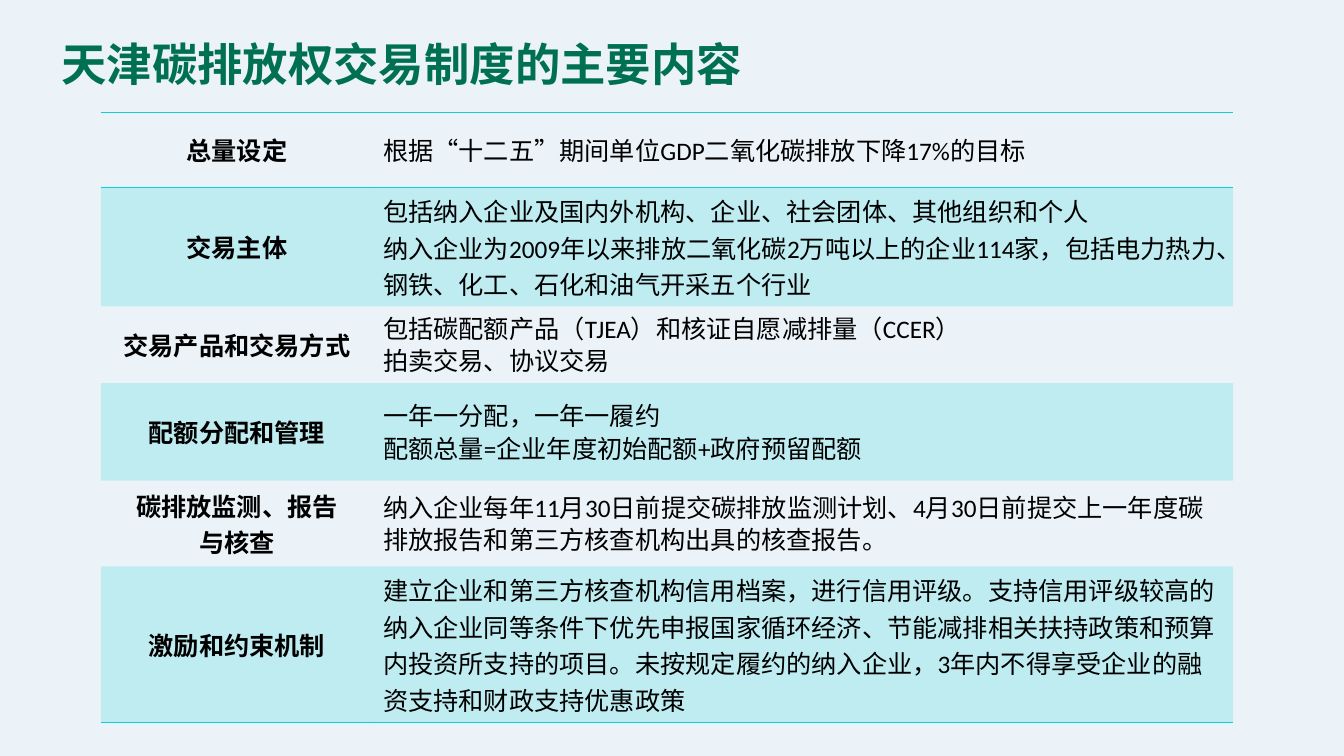
from lxml import etree
from pptx import Presentation
from pptx.dml.color import RGBColor
from pptx.enum.text import MSO_ANCHOR, PP_ALIGN
from pptx.oxml.ns import qn
from pptx.util import Inches, Pt

BACKGROUND = RGBColor(0xEC, 0xF3, 0xF8)
GREEN = RGBColor(0x00, 0x71, 0x50)
TURQUOISE = RGBColor(0x0B, 0xD0, 0xD9)
BLACK = RGBColor(0x00, 0x00, 0x00)
MIDDLE = MSO_ANCHOR.MIDDLE
CENTER = PP_ALIGN.CENTER
LEFT = PP_ALIGN.LEFT
NO_GRID_STYLE = "{2D5ABB26-0587-4C30-8999-92F81FD0307C}"


def add_rule(cell, side):
    line = etree.SubElement(cell._tc.get_or_add_tcPr(), qn(f"a:{side}"), w=str(Pt(1)))
    fill = etree.SubElement(line, qn("a:solidFill"))
    etree.SubElement(fill, qn("a:srgbClr"), val=str(TURQUOISE))


def write_paragraphs(frame, lines, font_name, size, color, bold, spacing, align):
    for index, line in enumerate(lines):
        paragraph = frame.paragraphs[0] if index == 0 else frame.add_paragraph()
        paragraph.alignment = align
        paragraph.line_spacing = spacing
        run = paragraph.add_run()
        run.text = line
        run.font.name = font_name
        run.font.size = Pt(size)
        run.font.bold = bold
        run.font.color.rgb = color


presentation = Presentation()
presentation.slide_width = Inches(13.33)
presentation.slide_height = Inches(7.5)
slide = presentation.slides.add_slide(presentation.slide_layouts[6])
slide.background.fill.solid()
slide.background.fill.fore_color.rgb = BACKGROUND

title = slide.shapes.add_textbox(Inches(0.51), Inches(0.2), Inches(7.13), Inches(0.92)).text_frame
title.word_wrap = True
title.vertical_anchor = MIDDLE
write_paragraphs(title, ["天津碳排放权交易制度的主要内容"], "Montserrat", 32.4, GREEN, True, 0.9, LEFT)

policies = [
    (0.74, 0.9, 0.9, ["总量设定"],
     ["根据“十二五”期间单位GDP二氧化碳排放下降17%的目标"]),
    (1.18, 1.0, 1.0, ["交易主体"],
     ["包括纳入企业及国内外机构、企业、社会团体、其他组织和个人",
      "纳入企业为2009年以来排放二氧化碳2万吨以上的企业114家，包括电力热力、钢铁、化工、石化和油气开采五个行业"]),
    (0.76, 1.0, 0.9, ["交易产品和交易方式"],
     ["包括碳配额产品（TJEA）和核证自愿减排量（CCER）",
      "拍卖交易、协议交易"]),
    (0.97, 1.0, 0.9, ["配额分配和管理"],
     ["一年一分配，一年一履约",
      "配额总量=企业年度初始配额+政府预留配额"]),
    (0.85, 1.0, 0.9, ["碳排放监测、报告", "与核查"],
     ["纳入企业每年11月30日前提交碳排放监测计划、4月30日前提交上一年度碳排放报告和第三方核查机构出具的核查报告。"]),
    (1.55, 1.0, 1.0, ["激励和约束机制"],
     ["建立企业和第三方核查机构信用档案，进行信用评级。支持信用评级较高的"
      "纳入企业同等条件下优先申报国家循环经济、节能减排相关扶持政策和预算"
      "内投资所支持的项目。未按规定履约的纳入企业，3年内不得享受企业的融"
      "资支持和财政支持优惠政策"]),
]
last_row = len(policies) - 1
table_height = sum(policy[0] for policy in policies)

policy_table = slide.shapes.add_table(
    len(policies), 2, Inches(1), Inches(1.12), Inches(11.23), Inches(table_height)).table
policy_table.first_row = False
policy_table.horz_banding = False
policy_table._tbl.tblPr.find(qn("a:tableStyleId")).text = NO_GRID_STYLE
policy_table.columns[0].width = Inches(2.7)
policy_table.columns[1].width = Inches(8.53)

for row, (height, topic_spacing, content_spacing, topic, content) in enumerate(policies):
    policy_table.rows[row].height = Inches(height)
    columns = [(topic, True, topic_spacing, CENTER), (content, False, content_spacing, LEFT)]
    for column, (lines, bold, spacing, align) in enumerate(columns):
        cell = policy_table.cell(row, column)
        cell.vertical_anchor = MIDDLE
        if row == 0:
            add_rule(cell, "lnT")
        if row in (0, last_row):
            add_rule(cell, "lnB")
        if row % 2:
            cell.fill.solid()
            cell.fill.fore_color.rgb = TURQUOISE
            tint = cell._tc.tcPr.find(qn("a:solidFill")).find(qn("a:srgbClr"))
            etree.SubElement(tint, qn("a:alpha"), val="20000")
        else:
            cell.fill.background()
        write_paragraphs(cell.text_frame, lines, "Calibri", 18, BLACK, bold, spacing, align)

presentation.save("out.pptx")
